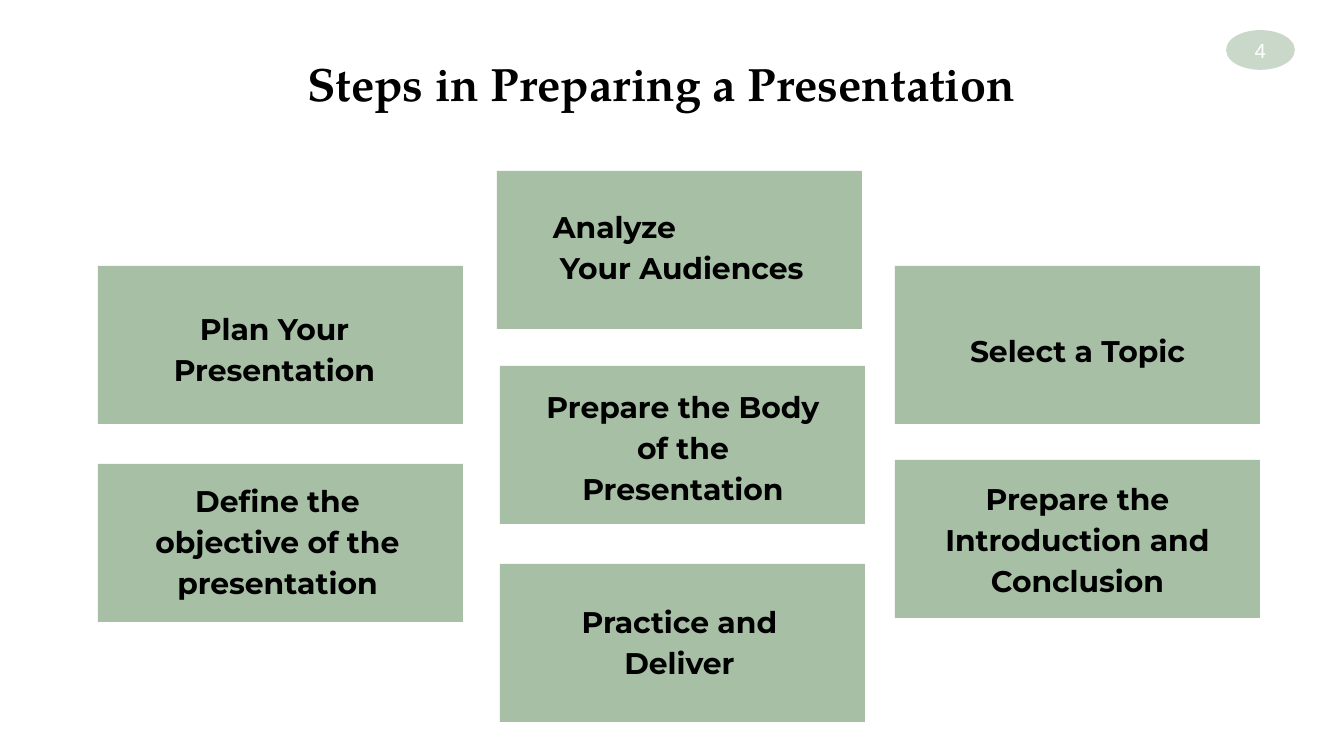
import pptx
import pptx.util
import pptx.dml.color
import pptx.enum.shapes
import pptx.enum.text

PX = 914400 / 134.4
SAGE = pptx.dml.color.RGBColor(0xA6, 0xBF, 0xA5)
PALE_SAGE = pptx.dml.color.RGBColor(0xC9, 0xD8, 0xC8)
BLACK = pptx.dml.color.RGBColor(0, 0, 0)
WHITE = pptx.dml.color.RGBColor(255, 255, 255)
CENTER = pptx.enum.text.PP_ALIGN.CENTER
LEFT = pptx.enum.text.PP_ALIGN.LEFT
TOP = pptx.enum.text.MSO_ANCHOR.TOP
MIDDLE = pptx.enum.text.MSO_ANCHOR.MIDDLE
SHAPES = pptx.enum.shapes.MSO_SHAPE

TITLE = "Steps in Preparing a Presentation"
PAGE_NUMBER = "4"
CARD_SIZE = (365, 158)
INSET = 13
HANGING = 7

# step, card (left, top), label (left, top, width, height), alignment
STEPS = [
    ("Plan Your Presentation", (98, 266), (106, 292, 337, 83), CENTER),
    ("Define the objective of the presentation", (98, 464), (109, 464, 337, 83), CENTER),
    ("Prepare the Body of the Presentation", (500, 366), (527, 370, 312, 83), CENTER),
    ("Analyze\vYour Audiences", (497, 171), (540, 190, 312, 122), LEFT),
    ("Prepare the Introduction and Conclusion", (895, 460), (909, 462, 337, 155), CENTER),
    ("Select a Topic", (895, 266), (909, 314, 337, 124), CENTER),
    ("Practice and Deliver", (500, 564), (511, 585, 337, 141), CENTER),
]


def px(*lengths):
    return [pptx.util.Emu(round(length * PX)) for length in lengths]


def write(frame, text, font_name, size, color, bold=True, align=CENTER, anchor=TOP, inset=INSET):
    frame.word_wrap = True
    frame.auto_size = pptx.enum.text.MSO_AUTO_SIZE.NONE
    frame.vertical_anchor = anchor
    frame.margin_left, frame.margin_top, frame.margin_right, frame.margin_bottom = px(*[inset] * 4)
    frame.text = text
    paragraph = frame.paragraphs[0]
    paragraph.alignment = align
    for run in paragraph.runs:
        run.font.name = font_name
        run.font.size = pptx.util.Pt(size)
        run.font.bold = bold
        run.font.color.rgb = color
    return paragraph


def add_filled(slide, kind, box, color):
    shape = slide.shapes.add_shape(kind, *px(*box))
    shape.shadow.inherit = False
    shape.fill.solid()
    shape.fill.fore_color.rgb = color
    shape.line.fill.background()
    return shape


def add_step(slide, step, corner, label_box, align):
    add_filled(slide, SHAPES.RECTANGLE, corner + CARD_SIZE, SAGE)
    label = slide.shapes.add_textbox(*px(*label_box))
    paragraph = write(label.text_frame, step, "Montserrat", 16, BLACK, align=align)
    paragraph.line_spacing = 1.15
    if align == LEFT:
        hanging, = px(HANGING)
        properties = paragraph._p.get_or_add_pPr()
        properties.set("marL", str(hanging))
        properties.set("indent", str(-hanging))


def main():
    deck = pptx.Presentation()
    deck.slide_width, deck.slide_height = px(1344, 756)
    slide = deck.slides.add_slide(deck.slide_layouts[5])

    title = slide.shapes.title
    title.left, title.top, title.width, title.height = px(77, 42, 1169, 159)
    write(title.text_frame, TITLE, "TeX Gyre Pagella", 25, BLACK)

    for step in STEPS:
        add_step(slide, *step)

    badge = add_filled(slide, SHAPES.OVAL, (1228, 32, 65, 36), PALE_SAGE)
    badge.line.color.rgb = PALE_SAGE
    badge.line.width = pptx.util.Pt(2)
    write(badge.text_frame, PAGE_NUMBER, "Arial", 11, WHITE, bold=False, anchor=MIDDLE, inset=0)

    deck.save("out.pptx")


if __name__ == "__main__":
    main()
